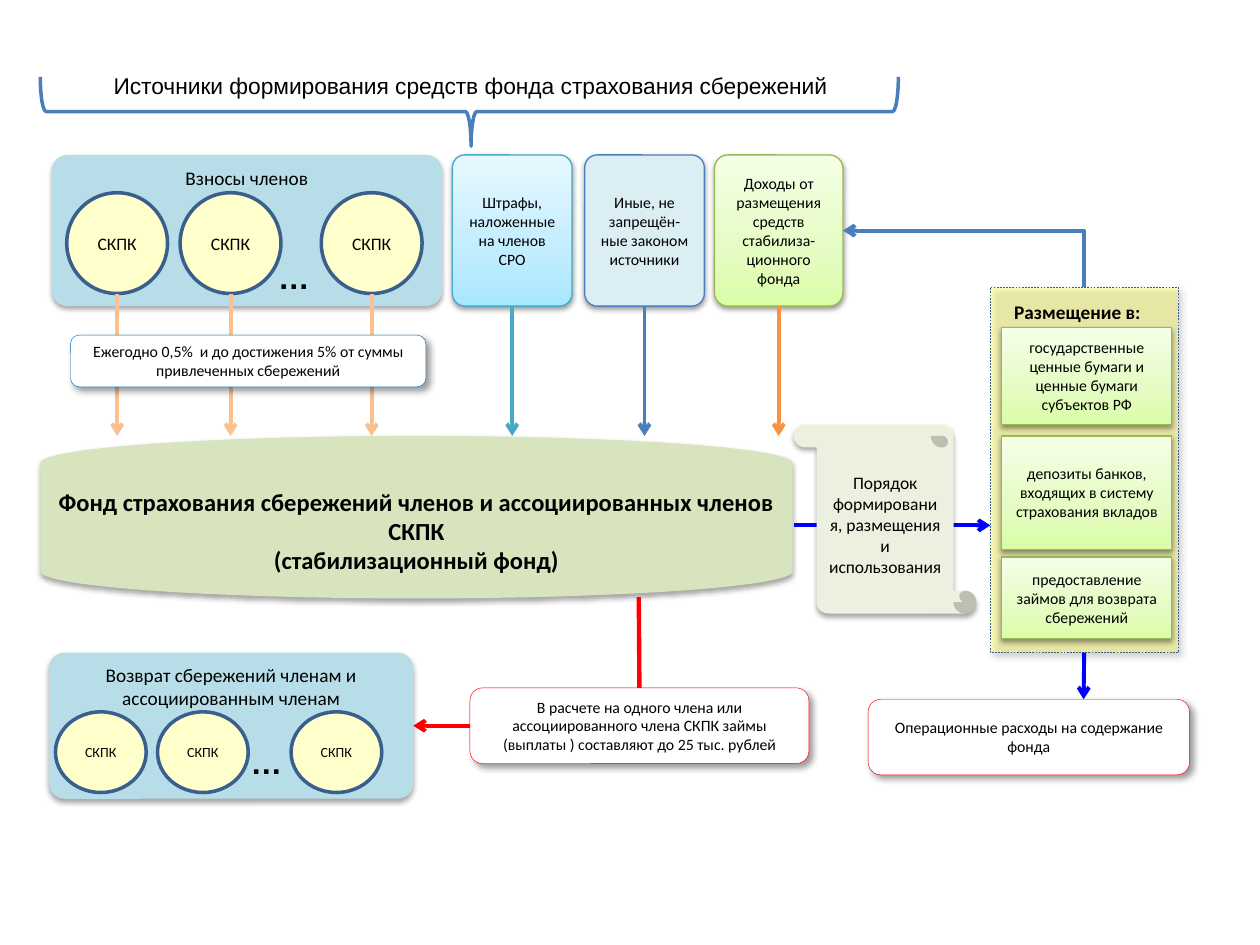
from copy import deepcopy
from dataclasses import dataclass
from typing import NamedTuple, Optional

from pptx import Presentation
from pptx import util as u
from pptx.dml.color import RGBColor
from pptx.enum import shapes, text
from pptx.enum.dml import MSO_LINE
from pptx.oxml import parse_xml
from pptx.oxml.ns import nsdecls, qn

UNIT = 0.1  # inches: the slide is a grid of 100 columns by 75 rows
KIND = shapes.MSO_SHAPE


class Box(NamedTuple):
    col: float
    row: float
    cols: float
    rows: float


class Shadow(NamedTuple):
    alpha: int
    blur: float
    distance: float
    angle: int


@dataclass(frozen=True)
class Theme:
    body: str = "Calibri"
    heading: str = "Arial"
    black: str = "000000"
    white: str = "FFFFFF"
    navy: str = "3A5F8C"
    blue: str = "4B7EBC"
    teal: str = "46AAC5"
    green: str = "98B955"
    orange: str = "F69240"
    peach: str = "FAC090"
    red: str = "FF0000"
    pure_blue: str = "0000FF"
    green_fade: tuple = ("DAFDA7", "E4FCC2", "F5FFE7")
    teal_fade: tuple = ("A7E6FF", "C1EDFF", "E7F8FF")
    tiny: int = 8
    small: int = 9
    medium: int = 10
    label: int = 11
    title: int = 13
    fund: int = 14
    dots: int = 18
    soft: Shadow = Shadow(35, 3.1, 1.8, 90)
    raised: Shadow = Shadow(38, 3.1, 1.6, 90)
    cast: Shadow = Shadow(40, 4, 3, 45)


T = Theme()


@dataclass(frozen=True)
class Style:
    kind: int
    fill: object = None  # a colour, or three colours of a fade from the bottom up
    line: Optional[str] = None
    width: float = 0.75
    shadow: Optional[Shadow] = None
    size: int = T.small
    bold: bool = False
    corner: Optional[float] = None
    anchor: int = text.MSO_ANCHOR.MIDDLE


def source_style(fill, line: str) -> Style:
    return Style(KIND.ROUNDED_RECTANGLE, fill, line, shadow=T.raised, corner=0.106)


def callout_style(line: str) -> Style:
    return Style(KIND.ROUNDED_RECTANGLE, T.white, line, 0.25, T.cast)


PANEL = Style(KIND.ROUNDED_RECTANGLE, "B7DEE8", shadow=T.soft, size=T.label,
              corner=0.106, anchor=text.MSO_ANCHOR.TOP)
FUND = Style(KIND.FLOWCHART_MAGNETIC_DISK, "D7E4BD", shadow=T.soft, size=T.fund, bold=True)
SCROLL = Style(KIND.VERTICAL_SCROLL, "EBF1DE", shadow=T.soft, size=T.medium)
PLACEMENT = Style(KIND.RECTANGLE, "FFFF66", T.navy, 0.25, T.cast)
ASSET = Style(KIND.RECTANGLE, T.green_fade, T.green, shadow=T.raised)
BRACE = Style(KIND.LEFT_BRACE, line=T.blue, width=2)

SOURCES = [
    (Box(35.9, 12.3, 9.5, 12), "Штрафы, наложенные на членов СРО",
     source_style(T.teal_fade, T.teal), T.teal),
    (Box(46.4, 12.3, 9.5, 12), "Иные, не запрещён-ные законом источники",
     source_style("DBEEF4", T.blue), T.blue),
    (Box(56.7, 12.3, 10.2, 12), "Доходы от размещения средств стабилиза-ционного фонда",
     source_style(T.green_fade, T.green), T.orange),
]
ASSETS = [
    (26, 7.7, "государственные ценные бумаги и ценные бумаги субъектов РФ"),
    (34.6, 9, "депозиты банков, входящих в систему страхования вкладов"),
    (44.2, 6.5, "предоставление займов для возврата сбережений"),
]
FUND_TOP = 34.6


def grid(*lengths: float) -> list:
    return [u.Inches(n * UNIT) for n in lengths]


def write(tf, words: str, size: int, font: str = T.body, bold: bool = False,
          align: int = text.PP_ALIGN.CENTER) -> None:
    tf.text = words
    p = tf.paragraphs[0]
    p.alignment = align
    p.font.name, p.font.size, p.font.bold = font, u.Pt(size), bold
    p.font.color.rgb = RGBColor.from_string(T.black)


def paint(s, fill) -> None:
    """Fill with nothing, one colour, or a fade of three colours."""
    if fill is None:
        s.fill.background()
    elif isinstance(fill, str):
        s.fill.solid()
        s.fill.fore_color.rgb = RGBColor.from_string(fill)
    else:
        s.fill.gradient()
        s.fill.gradient_angle = 90
        stops = next(s._element.spPr.iter(qn("a:gsLst")))
        stops.append(deepcopy(stops[0]))
        for stop, place, colour in zip(s.fill.gradient_stops, (0, 0.35, 1), fill):
            stop.position = place
            stop.color.rgb = RGBColor.from_string(colour)


def cast_shadow(s, shadow: Shadow) -> None:
    effects = s._element.spPr.find(qn("a:effectLst"))
    effects.append(parse_xml(
        f'<a:outerShdw {nsdecls("a")} blurRad="{u.Pt(shadow.blur)}" dist="{u.Pt(shadow.distance)}" '
        f'dir="{shadow.angle * 60000}" rotWithShape="0"><a:srgbClr val="{T.black}">'
        f'<a:alpha val="{shadow.alpha * 1000}"/></a:srgbClr></a:outerShdw>'))


def draw(sp, box: Box, style: Style, words: str = ""):
    s = sp.add_shape(style.kind, *grid(*box))
    s.shadow.inherit = False
    paint(s, style.fill)
    if style.line:
        s.line.color.rgb = RGBColor.from_string(style.line)
        s.line.width = u.Pt(style.width)
    else:
        s.line.fill.background()
    if style.shadow:
        cast_shadow(s, style.shadow)
    if style.corner is not None:
        s.adjustments[0] = style.corner
    if words:
        s.text_frame.word_wrap = True
        s.text_frame.vertical_anchor = style.anchor
        write(s.text_frame, words, style.size, bold=style.bold)
    return s


def label(sp, box: Box, words: str, size: int, wrap: bool = False, **look) -> None:
    tf = sp.add_textbox(*grid(*box)).text_frame
    tf.word_wrap = wrap
    write(tf, words, size, **look)


def connect(sp, start: tuple, end: tuple, colour: str, arrow: Optional[str] = "tailEnd",
            width: float = 2.25, kind: int = shapes.MSO_CONNECTOR.STRAIGHT):
    s = sp.add_connector(kind, *grid(*start, *end))
    s.line.color.rgb = RGBColor.from_string(colour)
    s.line.width = u.Pt(width)
    if arrow:
        s.line._get_or_add_ln().append(parse_xml(f'<a:{arrow} {nsdecls("a")} type="arrow"/>'))
    s._element.spPr.append(parse_xml(f'<a:effectLst {nsdecls("a")}/>'))
    return s


def members(sp, boxes: list, size: int, dots: Box) -> None:
    """A row of member circles with an ellipsis before the last."""
    style = Style(KIND.OVAL, "FFFFCC", T.navy, 2, size=size)
    for box in boxes:
        draw(sp, box, style, "СКПК")
    label(sp, dots, "…", T.dots, font=T.heading, bold=True, align=text.PP_ALIGN.LEFT)


def draw_sources(sp) -> None:
    label(sp, Box(7.7, 5.2, 59.2, 3.1), "Источники формирования средств фонда страхования сбережений",
          T.title, font=T.heading)
    brace = draw(sp, Box(34.5, -25.2, 5.5, 68.1), BRACE)
    brace.rotation = 270
    brace.adjustments[0], brace.adjustments[1] = 0.083, 0.502

    draw(sp, Box(4.1, 12.3, 31, 12), PANEL, "Взносы членов")
    circles = [Box(col, 15.3, 8, 8) for col in (5.3, 14.3, 25.5)]
    members(sp, circles, T.medium, Box(21.1, 20, 4.4, 4))
    for c in circles:
        middle = c.col + c.cols / 2
        connect(sp, (middle, c.row + c.rows), (middle, FUND_TOP), T.peach)
    draw(sp, Box(5.6, 26.6, 28.2, 4.1), callout_style("0070C0"),
         "Ежегодно 0,5%  и до достижения 5% от суммы привлеченных сбережений")
    for box, words, style, colour in SOURCES:
        s = draw(sp, box, style, words)
        middle = box.col + box.cols / 2
        connect(sp, (middle, box.row + box.rows), (middle, FUND_TOP), colour).begin_connect(s, 2)


def draw_placement(sp) -> None:
    connect(sp, (63, 41.7), (78.6, 41.7), T.pure_blue)
    scroll = draw(sp, Box(63, 33.7, 14.5, 15), SCROLL, "Порядок формирования, размещения и использования")
    scroll._element.spPr.find(qn("a:xfrm")).set("flipH", "1")
    area = draw(sp, Box(78.6, 22.8, 14.9, 29), PLACEMENT)
    area.line.dash_style = MSO_LINE.DASH
    next(area._element.spPr.iter(qn("a:srgbClr"))).append(
        parse_xml(f'<a:alpha {nsdecls("a")} val="42000"/>'))
    label(sp, Box(79.5, 23.3, 13.5, 2.8), "Размещение в:", T.label, wrap=True, bold=True,
          align=text.PP_ALIGN.LEFT)
    for row, rows, words in ASSETS:
        draw(sp, Box(79.5, row, 13.5, rows), ASSET, words)
    income = connect(sp, (66.9, 18.3), (86, 22.8), T.blue, "headEnd", kind=shapes.MSO_CONNECTOR.ELBOW)
    income._element.spPr.find(qn("a:prstGeom")).set("prst", "bentConnector2")
    connect(sp, (86, 51.8), (86, 55.5), T.pure_blue).begin_connect(area, 2)
    draw(sp, Box(68.9, 55.5, 25.5, 6), callout_style(T.red), "Операционные расходы на содержание фонда")


def draw_returns(sp) -> None:
    panel = draw(sp, Box(3.9, 51.8, 28.9, 11.6), PANEL, "Возврат сбережений членам и ассоциированным членам")
    members(sp, [Box(col, 56.5, 7.2, 6.4) for col in (4.4, 12.5, 23.1)], T.tiny, Box(18.9, 58.5, 4.4, 4))
    limit = draw(sp, Box(37.3, 54.6, 26.9, 6), callout_style(T.red),
                 "В расчете на одного члена или ассоциированного члена СКПК займы (выплаты ) "
                 "составляют до 25 тыс. рублей")
    connect(sp, (50.7, 47.4), (50.7, 54.6), T.red, None, 2.5).end_connect(limit, 0)
    payout = connect(sp, (37.3, 57.6), (32.8, 57.6), T.red)
    payout.begin_connect(limit, 1)
    payout.end_connect(panel, 3)


def main() -> None:
    prs = Presentation()
    prs.slide_width, prs.slide_height = grid(100, 75)
    sp = prs.slides.add_slide(prs.slide_layouts[6]).shapes
    draw(sp, Box(3.2, FUND_TOP, 59.7, 12.9), FUND,
         "Фонд страхования сбережений членов и ассоциированных членов СКПК\v(стабилизационный фонд)")
    draw_sources(sp)
    draw_placement(sp)
    draw_returns(sp)
    prs.save("out.pptx")


if __name__ == "__main__":
    main()
